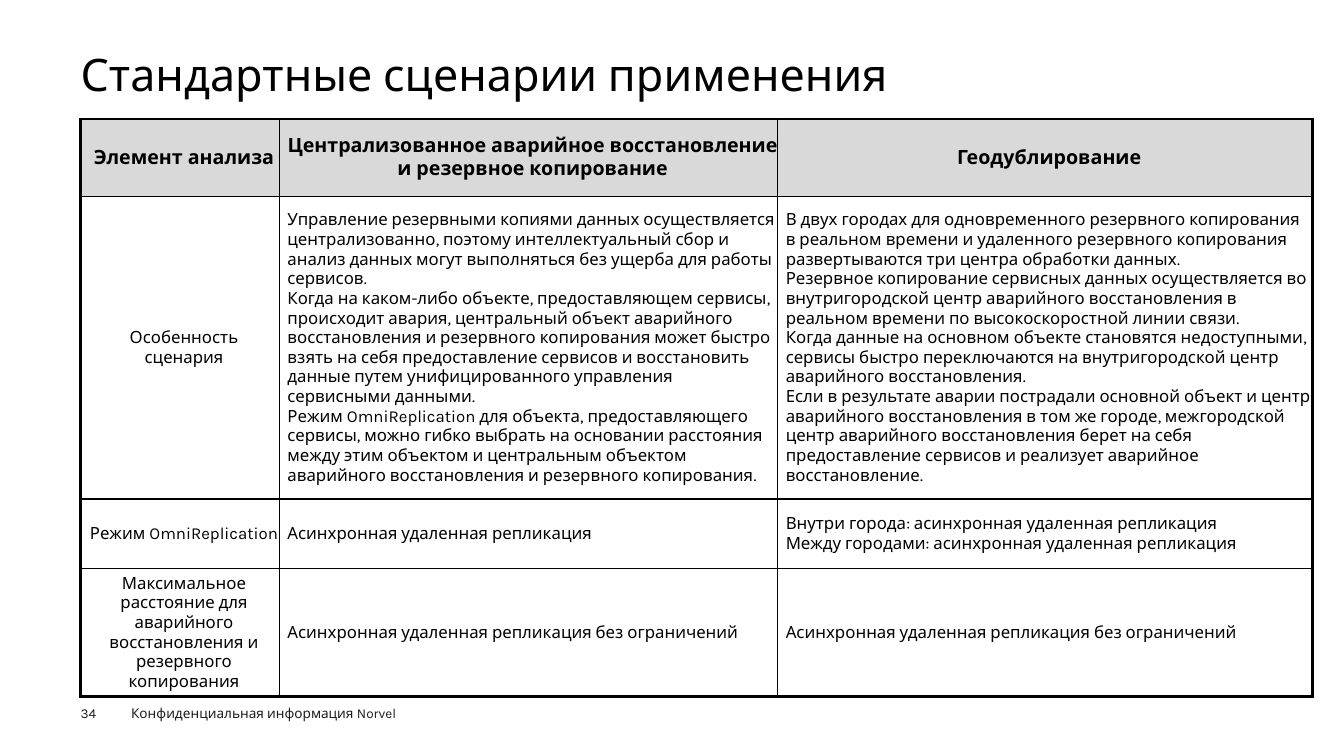
from lxml import etree
from pptx import Presentation
from pptx.dml.color import RGBColor
from pptx.enum.text import MSO_ANCHOR as Anchor, PP_ALIGN as Align
from pptx.oxml.ns import qn
from pptx.util import Pt

FONT = "Karla"
BLACK = RGBColor(0x00, 0x00, 0x00)
FOOTER_INK = RGBColor(0x1D, 0x1D, 0x1B)
HEADER_GREY = RGBColor(0xD9, 0xD9, 0xD9)
OUTER, INNER = 2.25, 1

COLUMNS = (142, 356, 382)
ROWS = (55.5, 216, 49.7, 69.8)
UNLIMITED = "Асинхронная удаленная репликация без ограничений"
SCENARIOS = [
    ["Элемент анализа",
     "Централизованное аварийное восстановление и резервное копирование",
     "Геодублирование"],
    ["Особенность сценария",
     "Управление резервными копиями данных осуществляется централизованно, поэтому "
     "интеллектуальный сбор и анализ данных могут выполняться без ущерба для работы сервисов.\n"
     "Когда на каком-либо объекте, предоставляющем сервисы, происходит авария, центральный "
     "объект аварийного восстановления и резервного копирования может быстро взять на себя "
     "предоставление сервисов и восстановить данные путем унифицированного управления "
     "сервисными данными.\n"
     "Режим OmniReplication для объекта, предоставляющего сервисы, можно гибко выбрать на "
     "основании расстояния между этим объектом и центральным объектом аварийного "
     "восстановления и резервного копирования.",
     "В двух городах для одновременного резервного копирования в реальном времени и "
     "удаленного резервного копирования развертываются три центра обработки данных.\n"
     "Резервное копирование сервисных данных осуществляется во внутригородской центр "
     "аварийного восстановления в реальном времени по высокоскоростной линии связи.\n"
     "Когда данные на основном объекте становятся недоступными, сервисы быстро "
     "переключаются на внутригородской центр аварийного восстановления.\n"
     "Если в результате аварии пострадали основной объект и центр аварийного восстановления "
     "в том же городе, межгородской центр аварийного восстановления берет на себя "
     "предоставление сервисов и реализует аварийное восстановление."],
    ["Режим OmniReplication",
     "Асинхронная удаленная репликация",
     "Внутри города: асинхронная удаленная репликация\n"
     "Между городами: асинхронная удаленная репликация"],
    ["Максимальное расстояние для аварийного восстановления и резервного копирования",
     UNLIMITED, UNLIMITED],
]


def format_text(tf, size, color, bold=False, align=Align.LEFT):
    for p in tf.paragraphs:
        p.alignment = align
        for r in p.runs:
            r.font.name, r.font.size, r.font.bold = FONT, Pt(size), bold
            r.font.color.rgb = color


def set_insets(tf, inset):
    tf.margin_left = tf.margin_top = tf.margin_right = tf.margin_bottom = Pt(inset)


def place_title(slide, left, top, width, height):
    title = slide.shapes.title
    title.left, title.top, title.width, title.height = map(Pt, (left, top, width, height))
    tf = title.text_frame
    tf.text = "Стандартные сценарии применения"
    set_insets(tf, 0)
    tf.vertical_anchor = Anchor.MIDDLE
    tf.paragraphs[0].line_spacing = 0.9
    format_text(tf, 32, BLACK)


def set_borders(cell, widths):
    """Draw black borders; widths maps L, R, T and B to points, in that order."""
    tcPr = cell._tc.get_or_add_tcPr()
    for side, width in widths.items():
        ln = etree.SubElement(tcPr, qn(f"a:ln{side}"), w=str(int(Pt(width))))
        fill = etree.SubElement(ln, qn("a:solidFill"))
        etree.SubElement(fill, qn("a:srgbClr"), val=str(BLACK))


def fill_cell(cell, text, is_header, is_label):
    cell.vertical_anchor = Anchor.MIDDLE
    cell.margin_left, cell.margin_right = Pt(5.7), Pt(0)
    cell.margin_top = cell.margin_bottom = Pt(3.6)
    cell.text_frame.text = text
    centred = is_header or is_label
    format_text(cell.text_frame, 14 if is_header else 12, BLACK, is_header,
                Align.CENTER if centred else Align.LEFT)
    if is_header:
        cell.fill.solid()
        cell.fill.fore_color.rgb = HEADER_GREY
    else:
        cell.fill.background()


def add_scenario_table(slide, left, top):
    frame = slide.shapes.add_table(len(ROWS), len(COLUMNS), Pt(left), Pt(top),
                                   Pt(sum(COLUMNS)), Pt(sum(ROWS)))
    table = frame.table
    table.first_row = table.horz_banding = False
    for column, width in zip(table.columns, COLUMNS):
        column.width = Pt(width)
    for row, height in zip(table.rows, ROWS):
        row.height = Pt(height)
    last_row, last_col = len(ROWS) - 1, len(COLUMNS) - 1
    for i, texts in enumerate(SCENARIOS):
        for j, text in enumerate(texts):
            cell = table.cell(i, j)
            at_edge = {"L": j == 0, "R": j == last_col, "T": i == 0, "B": i == last_row}
            set_borders(cell, {side: OUTER if edge else INNER
                               for side, edge in at_edge.items()})
            fill_cell(cell, text, is_header=i == 0, is_label=j == 0)


def add_footer(slide, left, top):
    items = (("34", 0, 39.6), ("Конфиденциальная информация Norvel", 36, 256))
    for text, offset, width in items:
        sp = slide.shapes.add_textbox(Pt(left + offset), Pt(top), Pt(width), Pt(13))
        tf = sp.text_frame
        tf.word_wrap = True
        set_insets(tf, 0)
        tf.text = text
        format_text(tf, 9.7, FOOTER_INK)


def main():
    prs = Presentation()
    prs.slide_width, prs.slide_height = Pt(960), Pt(540)
    slide = prs.slides.add_slide(prs.slide_layouts[5])
    place_title(slide, 57.6, 35.3, 844.6, 38.9)
    add_scenario_table(slide, 57.6, 85)
    add_footer(slide, 57.6, 503.5)
    prs.save("out.pptx")


if __name__ == "__main__":
    main()
